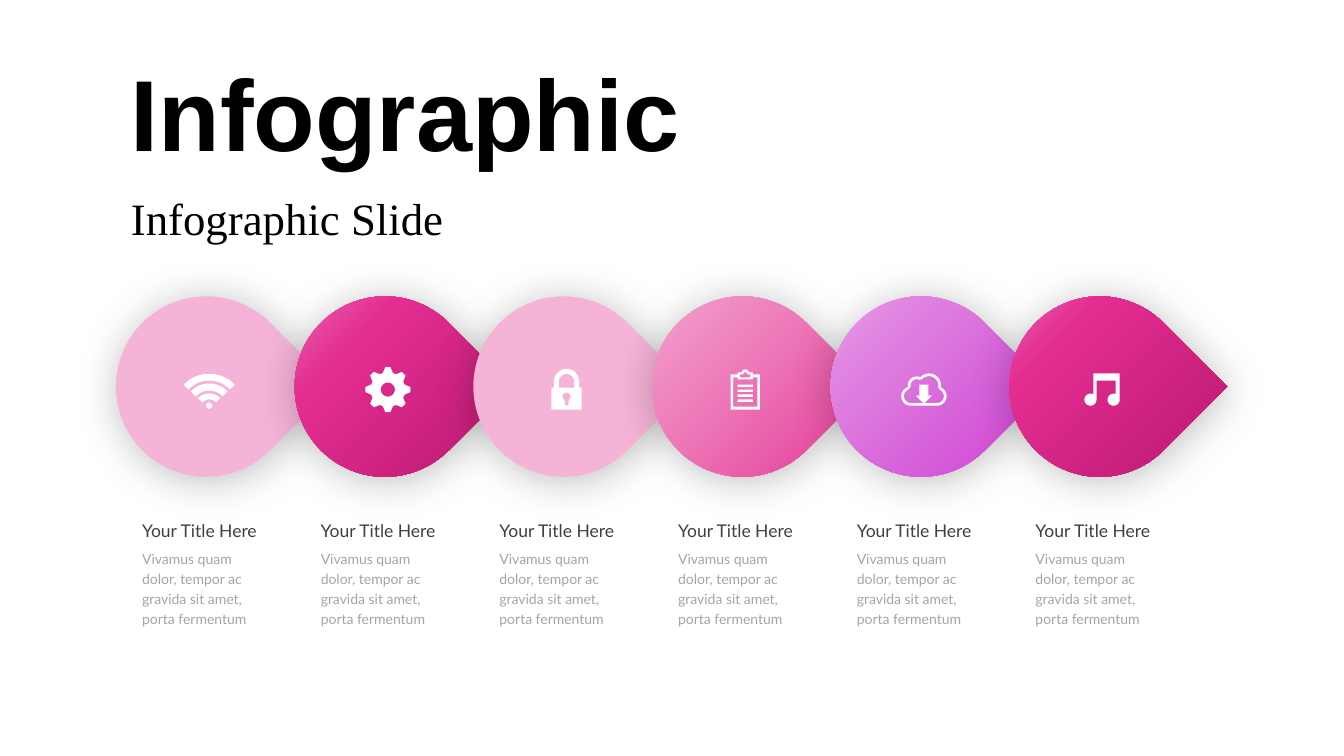
from dataclasses import dataclass
from math import cos, radians, sin

from pptx import Presentation
from pptx.dml.color import RGBColor
from pptx.enum.shapes import MSO_SHAPE as Preset
from pptx.oxml import parse_xml
from pptx.oxml.ns import nsdecls
from pptx.util import Inches, Pt


@dataclass(frozen=True)
class Theme:
    ink: str = "000000"
    heading: str = "3F3F3F"
    body: str = "A5A5A5"
    icon: str = "FFFFFF"
    blush: str = "F4B3D7"
    title_size: float = 72
    subtitle_size: float = 32
    heading_size: float = 12.5
    body_size: float = 10
    title_font: str = "Arial"
    subtitle_font: str = "Times New Roman"
    label_font: str = "Lato"


@dataclass(frozen=True)
class Box:
    left: float
    top: float
    width: float
    height: float

    def share(self, x, y, width, height):
        return Box(self.left + x * self.width, self.top + y * self.height,
                   width * self.width, height * self.height)

    def emu(self):
        return [Inches(n) for n in (self.left, self.top, self.width, self.height)]


THEME = Theme()
PAGE = Box(0, 0, 13.33, 7.5)
DROP = 1.79
OVERLAP = 0.99
ICON_SHIFT = 0.03


def arc(cx, cy, radius, start, end, steps=24):
    angles = [radians(start + (end - start) * i / steps) for i in range(steps + 1)]
    return [(cx + radius * cos(a), cy + radius * sin(a)) for a in angles]


def rect(left, top, right, bottom):
    return [(left, top), (right, top), (right, bottom), (left, bottom)]


def wifi():
    bands = [(34.7, 28), (25, 18), (15.2, 9.2)]
    waves = [arc(0, 19, outer, 223, 317) + arc(0, 19, inner, 317, 223)
             for outer, inner in bands]
    return waves + [arc(0, 16, 3, 0, 360)]


def gear():
    tooth = [(17.2, -17), (22.4, -6.5), (22.4, 6.5), (17.2, 17)]
    rim = [(r * cos(radians(45 * k + a)), r * sin(radians(45 * k + a)))
           for k in range(8) for r, a in tooth]
    return [rim, arc(0, 0, 7, 0, 360)]


def padlock():
    body = [(15, -2), (15, 20), (-15, 20), (-15, -2), (-12.5, -2)]
    return [body + arc(0, -8, 12.5, 180, 360) + [(12.5, -2)],
            [(7.5, -2), (-7.5, -2)] + arc(0, -8, 7.5, 180, 360),
            arc(0, 7, 4, 120, 420) + [(2, 14)] + arc(0, 14, 2, 0, 180)]


def clipboard():
    board = [(-14.5, 20), (-14.5, -15), (-7.5, -15), (-7.5, -17), (-3.5, -17)]
    page = [(-12, 17), (-12, -12), (-7.5, -12), (-7.5, -10)]
    clip = [(-5, -12), (-5, -15), (-2, -15)] + arc(0, -15.5, 1.8, 180, 360)
    clip += [(2, -15), (5, -15), (5, -12)]
    right_half = [(-x, y) for x, y in reversed(board)]
    right_page = [(-x, y) for x, y in reversed(page)]
    lines = [rect(-7.5, y, 7.5, y + 2.4) for y in (-4.9, 0, 4.9, 9.8)]
    return [board + arc(0, -16.5, 3.5, 180, 360) + right_half,
            page + right_page, clip] + lines


def cloud():
    lobes = [(-13, 6.5, 9.5, 90, 245), (-7, -4, 9, 170, 295),
             (5, -4, 12, 223, 370), (13, 6.5, 9.5, 295, 450)]
    outlines = [[point for x, y, r, start, end in lobes
                 for point in arc(x, y, r - inset, start, end)]
                for inset in (0, 2.7)]
    arrow = [(-4.5, -5), (4.5, -5), (4.5, 6), (8, 6), (0, 14), (-8, 6), (-4.5, 6)]
    return outlines + [arrow]


def music():
    return [[(-6, 10), (-6, -9), (13, -9)] + arc(11, 10, 6, 290, 0)
            + [(17, -16), (-9, -16)] + arc(-12, 10, 6, 300, 0)]


STEPS = [
    (wifi, None),
    (gear, [(0, "EE80BC"), (36, "E32D91"), (100, "B4176D")]),
    (padlock, None),
    (clipboard, [(0, "F4B3D7"), (41, "EE81BD"), (100, "E33092")]),
    (cloud, [(0, "EBB2EC"), (34, "DF81E1"), (100, "CC39CF")]),
    (music, [(0, "EE80BC"), (33, "E32D91"), (100, "B4176D")]),
]
HEADING = "Your Title Here"
BODY = "Vivamus quam dolor, tempor ac gravida sit amet, porta fermentum"


def add_text(slide, box, words, font_name, size, color, bold=False, spacing=None):
    frame = slide.shapes.add_textbox(*box.emu()).text_frame
    frame.word_wrap = True
    frame.text = words
    paragraph = frame.paragraphs[0]
    if spacing:
        paragraph.line_spacing = spacing
    font = paragraph.runs[0].font
    font.name, font.size, font.bold = font_name, Pt(size), bold
    font.color.rgb = RGBColor.from_string(color)


def add_drop(slide, box, stops):
    drop = slide.shapes.add_shape(Preset.TEAR, *box.emu())
    drop.rotation = 45
    properties = drop._element.spPr
    if stops:
        marks = "".join(f'<a:gs pos="{pos * 1000}"><a:srgbClr val="{color}"/></a:gs>'
                        for pos, color in stops)
        properties.append(parse_xml(
            f'<a:gradFill {nsdecls("a")} rotWithShape="1"><a:gsLst>{marks}</a:gsLst>'
            '<a:lin ang="0" scaled="0"/></a:gradFill>'))
    else:
        drop.fill.solid()
        drop.fill.fore_color.rgb = RGBColor.from_string(THEME.blush)
    drop.line.fill.background()
    properties.append(parse_xml(
        f'<a:effectLst {nsdecls("a")}><a:outerShdw blurRad="{Pt(31)}" dist="{Pt(3)}" '
        f'dir="{55 * 60000}" algn="ctr" rotWithShape="0"><a:srgbClr val="{THEME.ink}">'
        '<a:alpha val="26000"/></a:srgbClr></a:outerShdw></a:effectLst>'))


def add_icon(slide, box, contours):
    scaled = [[(Inches(x / 100), Inches(y / 100)) for x, y in c] for c in contours]
    builder = slide.shapes.build_freeform(*scaled[0][0], scale=1.0)
    for index, contour in enumerate(scaled):
        if index:
            builder.move_to(*contour[0])
        builder.add_line_segments(contour[1:], close=True)
    icon = builder.convert_to_shape(
        Inches(box.left + box.width / 2 + ICON_SHIFT),
        Inches(box.top + box.height / 2 + ICON_SHIFT))
    icon.shadow.inherit = False
    icon.fill.solid()
    icon.fill.fore_color.rgb = RGBColor.from_string(THEME.icon)
    icon.line.fill.background()


def add_header(slide, box):
    add_text(slide, box.share(0, 0, 1, 0.71), "Infographic",
             THEME.title_font, THEME.title_size, THEME.ink, bold=True)
    add_text(slide, box.share(0, 0.69, 0.68, 0.31), "Infographic Slide",
             THEME.subtitle_font, THEME.subtitle_size, THEME.ink)


def add_labels(slide, box):
    add_text(slide, box.share(0, 0, 1, 0.28), HEADING,
             THEME.label_font, THEME.heading_size, THEME.heading, spacing=1.2)
    add_text(slide, box.share(0, 0.25, 0.99, 0.75), BODY,
             THEME.label_font, THEME.body_size, THEME.body, spacing=1.2)


def add_steps(slide, box):
    drops = [Box(box.left + i * DROP * OVERLAP, box.top, DROP, DROP)
             for i in range(len(STEPS))]
    for drop, (_, stops) in zip(drops, STEPS):
        add_drop(slide, drop, stops)
    for drop, (draw, _) in zip(drops, STEPS):
        add_icon(slide, drop, draw())
        add_labels(slide, drop.share(0.09, 1.19, 0.82, 0.68))


def main():
    deck = Presentation()
    deck.slide_width, deck.slide_height = Inches(PAGE.width), Inches(PAGE.height)
    slide = deck.slides.add_slide(deck.slide_layouts[6])
    add_header(slide, PAGE.share(0.09, 0.06, 0.51, 0.27))
    add_steps(slide, Box(1.15, 2.94, 10.66, 3.34))
    deck.save("out.pptx")


if __name__ == "__main__":
    main()
